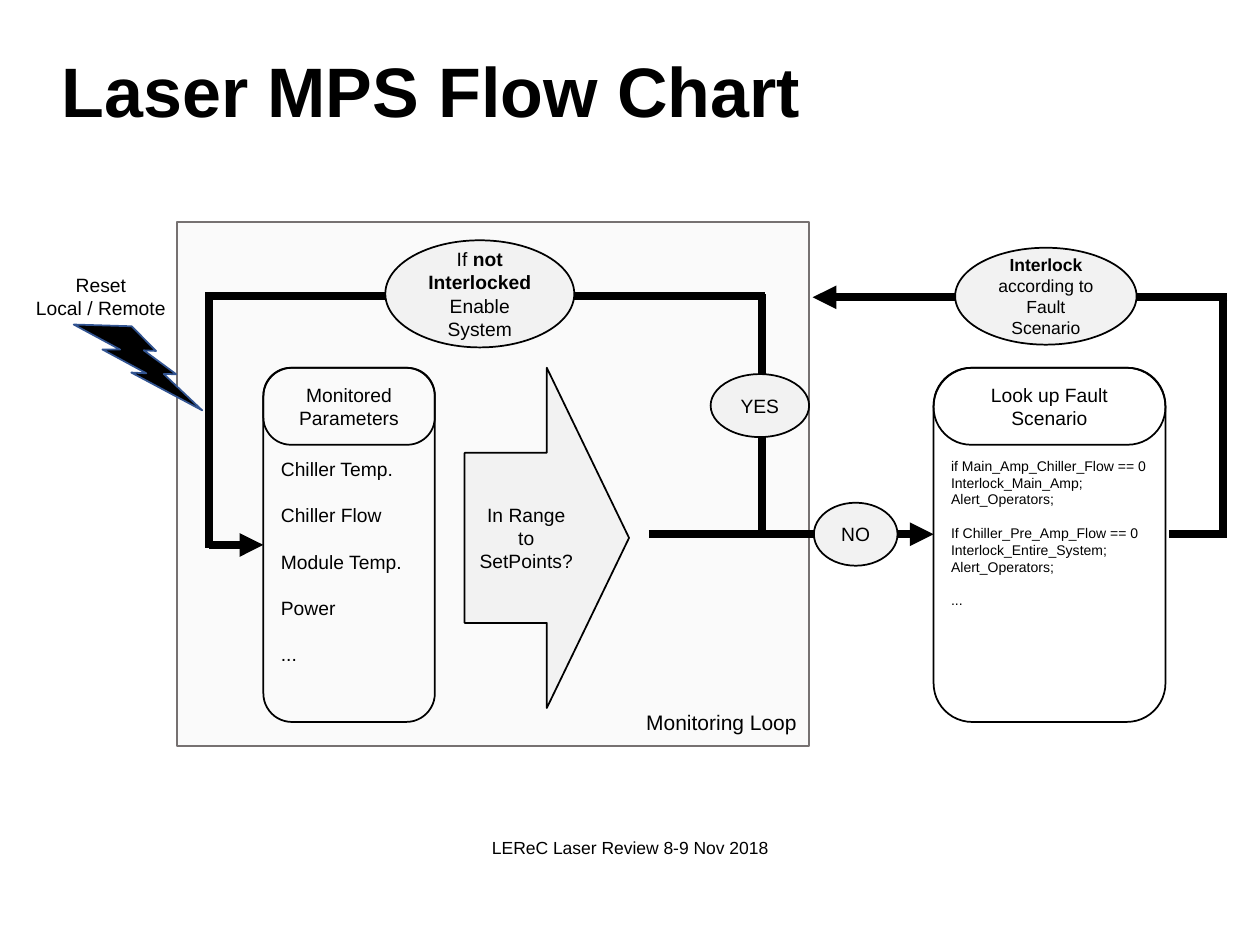
"""Build the Laser MPS flow chart slide."""
from dataclasses import dataclass

import pptx
import pptx.dml.color
import pptx.enum.shapes
import pptx.enum.text
import pptx.oxml.ns
import pptx.util
from lxml import etree

Pt = pptx.util.Pt
RGBColor = pptx.dml.color.RGBColor
MSO_SHAPE = pptx.enum.shapes.MSO_SHAPE
MSO_CONNECTOR = pptx.enum.shapes.MSO_CONNECTOR
PP_ALIGN = pptx.enum.text.PP_ALIGN
MSO_ANCHOR = pptx.enum.text.MSO_ANCHOR
MSO_AUTO_SIZE = pptx.enum.text.MSO_AUTO_SIZE
qn = pptx.oxml.ns.qn

BLACK = RGBColor(0x00, 0x00, 0x00)
PALE = RGBColor(0xFA, 0xFA, 0xFA)
LIGHT = RGBColor(0xF2, 0xF2, 0xF2)
GREY = RGBColor(0x76, 0x71, 0x71)
BLUE = RGBColor(0x32, 0x54, 0x91)
FONT = "Arial"
BODY_TOP, BODY_HEIGHT, HEAD_HEIGHT = 210.2, 202.4, 44
LOOP_Y, RANGE_Y, FAULT_X = 169.2, 305.3, 699.1


@dataclass
class Box:
    x: float
    y: float
    w: float
    h: float


@dataclass
class Card:
    x: float
    w: float
    radius: float
    heading: str


@dataclass
class Note:
    box: Box
    groups: tuple[str, ...]
    size: float = 11
    gap: float = 0
    align: PP_ALIGN = PP_ALIGN.LEFT
    wrap: bool = False


@dataclass
class Bubble:
    box: Box
    spans: tuple[tuple[str, bool], ...]
    size: float = 11


@dataclass
class Line:
    x1: float
    y1: float
    x2: float
    y2: float
    arrow: bool = False


def format_paragraph(p, size: float, align: PP_ALIGN) -> None:
    p.alignment = align
    for r in p.runs:
        r.font.name, r.font.size = FONT, Pt(size)
        r.font.color.rgb = BLACK


def add_shape(s, kind: MSO_SHAPE, box: Box, fill: RGBColor | None = None,
              line: RGBColor = BLACK, text: str = ""):
    sp = s.shapes.add_shape(kind, Pt(box.x), Pt(box.y), Pt(box.w), Pt(box.h))
    sp.shadow.inherit = False
    if fill is None:
        sp.fill.background()
    else:
        sp.fill.solid()
        sp.fill.fore_color.rgb = fill
    sp.line.color.rgb, sp.line.width = line, Pt(1)
    if text:
        sp.text_frame.text = text
        sp.text_frame.vertical_anchor = MSO_ANCHOR.MIDDLE
        format_paragraph(sp.text_frame.paragraphs[0], 11, PP_ALIGN.CENTER)
    return sp


def add_card(s, card: Card):
    body = add_shape(s, MSO_SHAPE.ROUNDED_RECTANGLE,
                     Box(card.x, BODY_TOP, card.w, BODY_HEIGHT))
    head = add_shape(s, MSO_SHAPE.ROUNDED_RECTANGLE,
                     Box(card.x, BODY_TOP, card.w, HEAD_HEIGHT), text=card.heading)
    head.adjustments[0] = card.radius
    return body


def add_note(s, note: Note) -> None:
    b = note.box
    tf = s.shapes.add_textbox(Pt(b.x), Pt(b.y), Pt(b.w), Pt(b.h)).text_frame
    tf.word_wrap = note.wrap
    tf.auto_size = MSO_AUTO_SIZE.SHAPE_TO_FIT_TEXT
    tf.text = "\n".join(note.groups)
    start = 0
    for group in note.groups:
        if start:
            tf.paragraphs[start].space_before = Pt(note.gap)
        start += group.count("\n") + 1
    for p in tf.paragraphs:
        format_paragraph(p, note.size, note.align)


def add_bubble(s, bubble: Bubble) -> None:
    tf = add_shape(s, MSO_SHAPE.OVAL, bubble.box, LIGHT).text_frame
    tf.vertical_anchor = MSO_ANCHOR.MIDDLE
    p = tf.paragraphs[0]
    for text, bold in bubble.spans:
        if text == "\v":
            p.add_line_break()
        else:
            r = p.add_run()
            r.text, r.font.bold = text, bold
    format_paragraph(p, bubble.size, PP_ALIGN.CENTER)


def add_line(s, line: Line):
    c = s.shapes.add_connector(MSO_CONNECTOR.STRAIGHT, Pt(line.x1), Pt(line.y1),
                               Pt(line.x2), Pt(line.y2))
    c.line.color.rgb, c.line.width = BLACK, Pt(4.5)
    if line.arrow:
        etree.SubElement(c.line._get_or_add_ln(), qn("a:tailEnd"), type="triangle")
    etree.SubElement(c._element.spPr, qn("a:effectLst"))
    return c


CARDS = (Card(150.5, 98, 0.358, "Monitored Parameters"),
         Card(533.5, 132.5, 0.488, "Look up Fault Scenario"))
NOTES = (
    Note(Box(153.4, 257.8, 85.7, 127.4),
         ("Chiller Temp.", "Chiller Flow", "Module Temp.", "Power", "..."), gap=13.2),
    Note(Box(13, 152.6, 89.3, 33.8), ("Reset\nLocal / Remote",), align=PP_ALIGN.CENTER),
    Note(Box(536.4, 257.8, 126.7, 94.3),
         ("if Main_Amp_Chiller_Flow == 0\vInterlock_Main_Amp;\nAlert_Operators;",
          "If Chiller_Pre_Amp_Flow == 0\nInterlock_Entire_System;\nAlert_Operators;",
          "..."), size=8, gap=9.6),
    Note(Box(362.2, 401.8, 100.8, 21.6), ("Monitoring Loop",), size=12),
    Note(Box(250.6, 474.5, 218.9, 19.4), ("LEReC Laser Review 8-9 Nov 2018",),
         size=10, align=PP_ALIGN.CENTER, wrap=True),
)
LINES = (
    Line(435.4, RANGE_Y, 435.4, 167.8),
    Line(119.7, LOOP_Y, 119.7, 313.2),
    Line(668.2, RANGE_Y, FAULT_X, RANGE_Y),
    Line(FAULT_X, 307.4, FAULT_X, 169.9),
    Line(370.8, RANGE_Y, 533.5, RANGE_Y, True),
    Line(437, LOOP_Y, 117.4, LOOP_Y),
    Line(701.3, 169.9, 464.4, 169.9, True),
)
BUBBLES = (
    Bubble(Box(406.1, 213.8, 56.3, 36), (("YES", False),)),
    Bubble(Box(465.1, 287.3, 47.8, 36), (("NO", False),)),
    Bubble(Box(220.2, 137.3, 108, 61.2),
           (("If ", False), ("not Interlocked", True), ("\v", False),
            ("Enable System", False))),
    Bubble(Box(545.8, 141.6, 103.7, 55.4),
           (("Interlock", True), (" according to Fault Scenario", False)), 10),
)


def main() -> None:
    prs = pptx.Presentation()
    prs.slide_width, prs.slide_height = Pt(720), Pt(540)
    s = prs.slides.add_slide(prs.slide_layouts[5])
    title = s.shapes.title
    title.left, title.top, title.width, title.height = Pt(28), Pt(28.8), Pt(656), Pt(104.4)
    tf = title.text_frame
    tf.text = "Laser MPS Flow Chart"
    tf.vertical_anchor, tf.auto_size = MSO_ANCHOR.TOP, MSO_AUTO_SIZE.NONE
    p = tf.paragraphs[0]
    p.line_spacing = 0.9
    format_paragraph(p, 40, PP_ALIGN.LEFT)
    p.runs[0].font.bold = True

    add_shape(s, MSO_SHAPE.RECTANGLE, Box(101, 126.7, 361.4, 299.5), PALE, GREY)
    bodies = [add_card(s, card) for card in CARDS]
    for note in NOTES:
        add_note(s, note)
    add_shape(s, MSO_SHAPE.RIGHT_ARROW, Box(265.5, 210.2, 94, 194.4), LIGHT,
              text="In Range to SetPoints?")
    for line in LINES:
        add_line(s, line)
    add_line(s, Line(119.7, 311.4, 150.5, 311.4, True)).end_connect(bodies[0], 1)
    for bubble in BUBBLES:
        add_bubble(s, bubble)
    bolt = add_shape(s, MSO_SHAPE.LIGHTNING_BOLT, Box(38.2, 188, 82.8, 37.4), BLACK, BLUE)
    bolt.rotation = 13.4
    prs.save("out.pptx")


if __name__ == "__main__":
    main()
